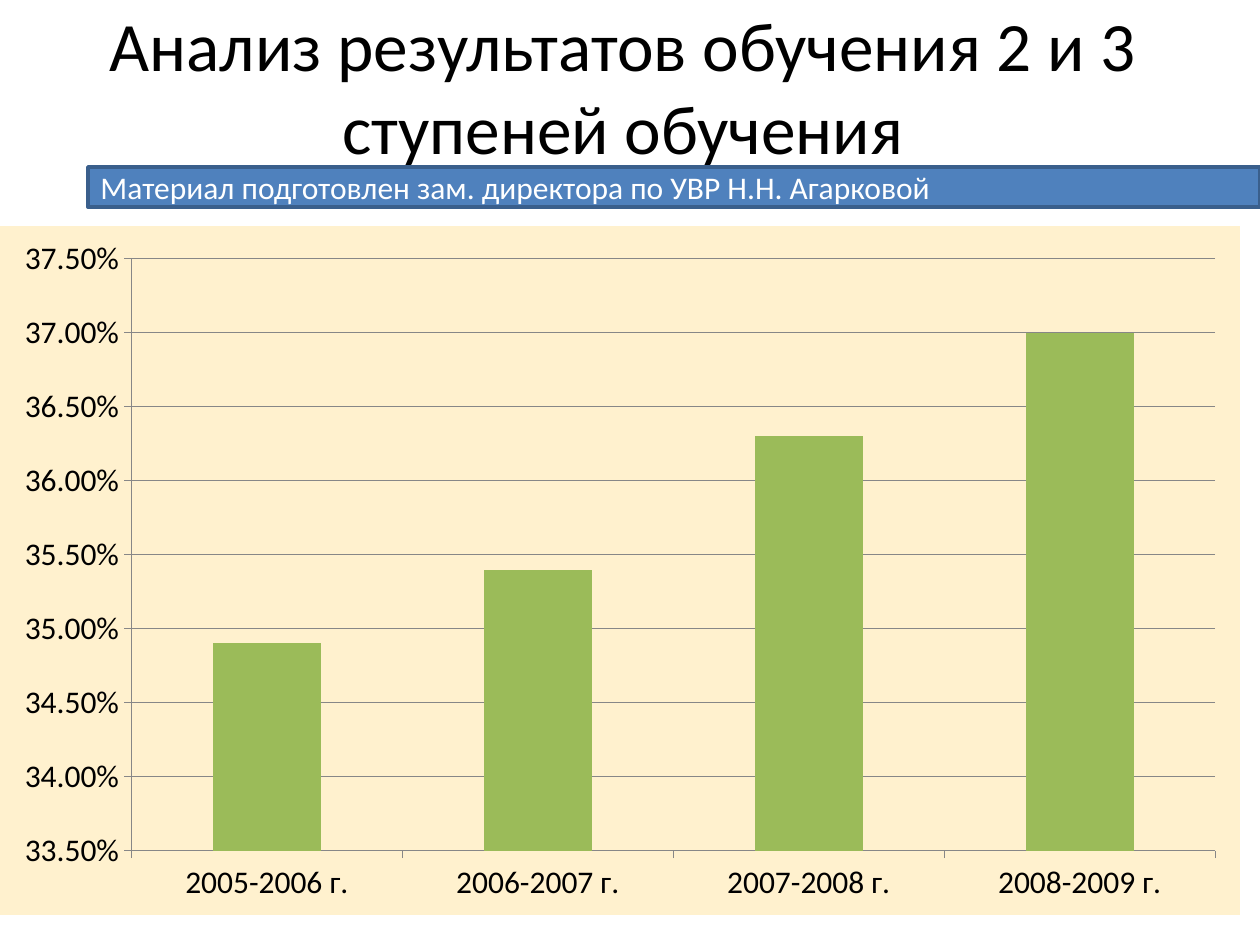
"""Build the slide on learning results for stages 2 and 3."""
from dataclasses import dataclass

import lxml.etree
import pptx
import pptx.chart.data
import pptx.dml.color
import pptx.enum.chart
import pptx.enum.shapes
import pptx.enum.text
import pptx.oxml
import pptx.oxml.ns
import pptx.util

EMU_PER_PX = 914400 / 126


@dataclass(frozen=True)
class Theme:
    font: str = "Calibri"
    title_size: float = 39.6
    body_size: float = 18
    text: str = "000000"
    light: str = "FFFFFF"
    banner: str = "4F81BD"
    banner_line: str = "3A5F8C"
    chart_fill: str = "FFF1CE"
    bar: str = "9BBB59"
    grid: str = "878787"


THEME = Theme()


def px(*lengths):
    return [pptx.util.Emu(round(n * EMU_PER_PX)) for n in lengths]


def rgb(color):
    return pptx.dml.color.RGBColor.from_string(color)


def style_font(font, size, color):
    font.name = THEME.font
    font.size = pptx.util.Pt(size)
    font.color.rgb = rgb(color)


def set_text(s, text, size, color, align):
    tf = s.text_frame
    tf.word_wrap = True
    tf.vertical_anchor = pptx.enum.text.MSO_ANCHOR.MIDDLE
    tf.text = text
    p = tf.paragraphs[0]
    p.alignment = align
    style_font(p.runs[0].font, size, color)


def add_title(slide, box, text):
    s = slide.shapes.add_textbox(*px(*box))
    set_text(s, text, THEME.title_size, THEME.text, pptx.enum.text.PP_ALIGN.CENTER)


def add_banner(slide, box, text):
    s = slide.shapes.add_shape(pptx.enum.shapes.MSO_SHAPE.RECTANGLE, *px(*box))
    s.shadow.inherit = False
    s.fill.solid()
    s.fill.fore_color.rgb = rgb(THEME.banner)
    s.line.color.rgb = rgb(THEME.banner_line)
    s.line.width = pptx.util.Pt(2)
    set_text(s, text, THEME.body_size, THEME.light, pptx.enum.text.PP_ALIGN.LEFT)


def fill_chart_area(chart, color):
    sp_pr = pptx.oxml.parse_xml(
        f'<c:spPr {pptx.oxml.ns.nsdecls("c", "a")}><a:solidFill><a:srgbClr val="{color}"/>'
        "</a:solidFill><a:ln><a:noFill/></a:ln></c:spPr>"
    )
    chart.element.find(pptx.oxml.ns.qn("c:chart")).addnext(sp_pr)


def style_axis(axis):
    axis.major_tick_mark = pptx.enum.chart.XL_TICK_MARK.OUTSIDE
    axis.minor_tick_mark = pptx.enum.chart.XL_TICK_MARK.NONE
    axis.format.line.color.rgb = rgb(THEME.grid)


def add_column_chart(slide, box, results):
    data = pptx.chart.data.CategoryChartData(number_format="0.00%")
    data.categories = list(results)
    data.add_series("Series 1", list(results.values()))
    kind = pptx.enum.chart.XL_CHART_TYPE.COLUMN_CLUSTERED
    chart = slide.shapes.add_chart(kind, *px(*box), data).chart
    chart.has_title = False
    chart.has_legend = False
    style_font(chart.font, THEME.body_size, THEME.text)
    fill_chart_area(chart, THEME.chart_fill)

    plot = chart.plots[0]
    plot.gap_width = 150
    plot.vary_by_categories = False
    fill = plot.series[0].format.fill
    fill.solid()
    fill.fore_color.rgb = rgb(THEME.bar)

    style_axis(chart.category_axis)
    axis = chart.value_axis
    style_axis(axis)
    axis.minimum_scale, axis.maximum_scale, axis.major_unit = 0.335, 0.375, 0.005
    axis.tick_labels.number_format = "0.00%"
    axis.tick_labels.number_format_is_linked = False
    axis.has_major_gridlines = True
    axis.major_gridlines.format.line.color.rgb = rgb(THEME.grid)


def main():
    prs = pptx.Presentation()
    prs.slide_width, prs.slide_height = px(1260, 945)
    slide = prs.slides.add_slide(prs.slide_layouts[6])
    add_title(slide, (39, 32, 1168, 106), "Анализ результатов обучения 2 и 3 ступеней обучения")
    add_banner(
        slide,
        (88, 167, 1172, 40),
        "Материал подготовлен зам. директора по УВР Н.Н. Агарковой",
    )
    results = {
        "2005-2006 г.": 0.349,
        "2006-2007 г.": 0.354,
        "2007-2008 г.": 0.363,
        "2008-2009 г.": 0.37,
    }
    add_column_chart(slide, (0, 226, 1240, 689), results)
    prs.save("out.pptx")


if __name__ == "__main__":
    main()
